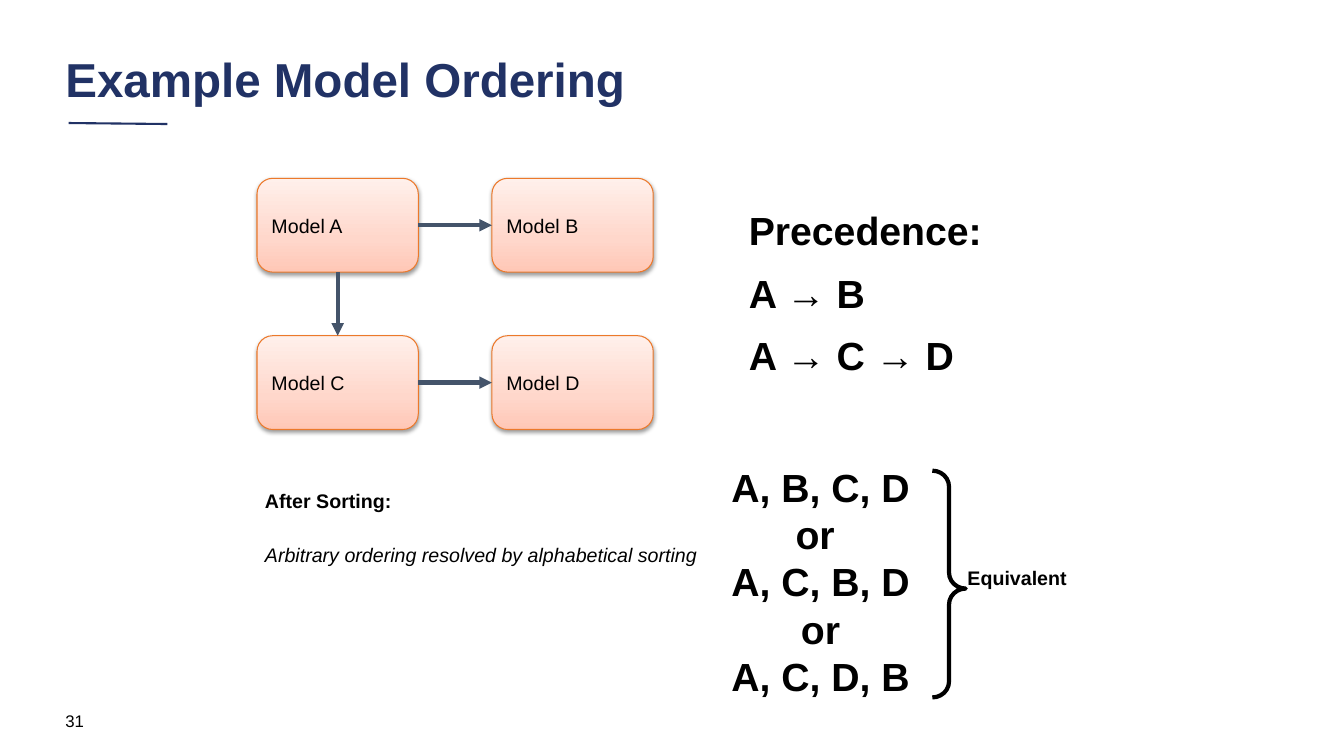
from pptx import Presentation
from pptx.dml.color import RGBColor
from pptx.enum.shapes import MSO_CONNECTOR, MSO_SHAPE
from pptx.enum.text import MSO_ANCHOR, PP_ALIGN
from pptx.oxml import parse_xml
from pptx.oxml.ns import nsdecls
from pptx.util import Pt

INK = {"navy": "213265", "black": "000000", "edge": "EC792B", "slate": "44546A"}
FADE = [(0, "FFC7B6"), (35, "FFD7CB"), (100, "FFF0EB")]
MODELS = {"A": (0, 0), "B": (1, 0), "C": (0, 1), "D": (1, 1)}
LINKS = [("A", 3, "B", 1), ("C", 3, "D", 1), ("A", 2, "C", 0)]
LEFT, TOP, WIDE, HIGH = 183.6, 127.4, 115.2, 67
STEP_X, STEP_Y = 167.8, 112.4

TEXTS = [
    ((39.6, 500.4, 216, 28.8), ["31"],
     dict(size=12, pad=3.6, anchor=MSO_ANCHOR.MIDDLE)),
    ((39.6, 33.1, 800.6, 54.7), ["Example Model Ordering"],
     dict(size=34, bold=True, color="navy", pitch=0.9)),
    ((182.2, 342, 324.9, 162.7),
     ["After Sorting:", "Arbitrary ordering resolved by alphabetical sorting"],
     dict(size=14, bold=[True, False], italic=[False, True], gap=22)),
    ((527.8, 140.4, 200.9, 129.6), ["Precedence:", "A → B", "A → C → D"],
     dict(size=28, bold=True, gap=11)),
    ((495.4, 324, 181.4, 167.8),
     ["A, B, C, D", "or ", "A, C, B, D", "or", "A, C, D, B"],
     dict(size=28, bold=True, align=PP_ALIGN.CENTER)),
    ((684, 396.7, 146.2, 46.1), ["Equivalent"], dict(size=14, bold=True)),
]


def tint(name):
    return RGBColor.from_string(INK[name])


def write(shape, lines, size=14, bold=False, italic=False, color="black",
          gap=0, pitch=None, pad=7.2, align=PP_ALIGN.LEFT, anchor=MSO_ANCHOR.TOP):
    frame = shape.text_frame
    frame.word_wrap = True
    frame.vertical_anchor = anchor
    frame.margin_left = frame.margin_right = Pt(7.2)
    frame.margin_top = frame.margin_bottom = Pt(pad)
    for i, line in enumerate(lines):
        para = frame.paragraphs[0] if i == 0 else frame.add_paragraph()
        para.alignment = align
        if i and gap:
            para.space_before = Pt(gap)
        if pitch:
            para.line_spacing = pitch
        run = para.add_run()
        run.text = line
        font = run.font
        font.name, font.size = "Arial", Pt(size)
        font.bold = bold[i] if isinstance(bold, list) else bold
        font.italic = italic[i] if isinstance(italic, list) else italic
        font.color.rgb = tint(color)


def stroke(shape, color, width):
    shape.line.color.rgb = tint(color)
    shape.line.width = Pt(width)


def link(slide, ends, color, width):
    line = slide.shapes.add_connector(MSO_CONNECTOR.STRAIGHT, *map(Pt, ends))
    stroke(line, color, width)
    line._element.spPr.append(parse_xml(f"<a:effectLst {nsdecls('a')}/>"))
    return line


def model(slide, name, col, row):
    box = slide.shapes.add_shape(
        MSO_SHAPE.FLOWCHART_ALTERNATE_PROCESS,
        Pt(LEFT + col * STEP_X), Pt(TOP + row * STEP_Y), Pt(WIDE), Pt(HIGH))
    stroke(box, "edge", 0.75)
    stops = "".join(f'<a:gs pos="{at * 1000}"><a:srgbClr val="{hue}"/></a:gs>'
                    for at, hue in FADE)
    props = box._element.spPr
    props.insert(2, parse_xml(
        f"<a:gradFill {nsdecls('a')}><a:gsLst>{stops}</a:gsLst>"
        '<a:lin ang="16200000" scaled="0"/></a:gradFill>'))
    props.append(parse_xml(
        f"<a:effectLst {nsdecls('a')}>"
        f'<a:outerShdw blurRad="{Pt(3.1)}" dist="{Pt(1.6)}" dir="5400000" rotWithShape="0">'
        f'<a:srgbClr val="{INK["black"]}"><a:alpha val="38000"/></a:srgbClr>'
        "</a:outerShdw></a:effectLst>"))
    write(box, [f"Model {name}"], anchor=MSO_ANCHOR.MIDDLE)
    return box


def main():
    """Build the model ordering slide."""
    deck = Presentation()
    deck.slide_width, deck.slide_height = Pt(960), Pt(540)
    slide = deck.slides.add_slide(deck.slide_layouts[6])
    link(slide, (49, 87.9, 119.5, 88.6), "navy", 1.5)
    boxes = {name: model(slide, name, *cell) for name, cell in MODELS.items()}
    for start, out, end, into in LINKS:
        line = link(slide, (0, 0, 0, 0), "slate", 3)
        line.begin_connect(boxes[start], out)
        line.end_connect(boxes[end], into)
        line.line._get_or_add_ln().append(
            parse_xml(f'<a:tailEnd {nsdecls("a")} type="triangle"/>'))
    for area, lines, style in TEXTS:
        write(slide.shapes.add_textbox(*map(Pt, area)), lines, **style)
    brace = slide.shapes.add_shape(
        MSO_SHAPE.RIGHT_BRACE, Pt(666), Pt(336.2), Pt(23.8), Pt(162))
    brace.adjustments[0], brace.adjustments[1] = 0.48, 0.52
    brace.fill.background()
    brace.shadow.inherit = False
    stroke(brace, "black", 3)
    deck.save("out.pptx")


if __name__ == "__main__":
    main()
